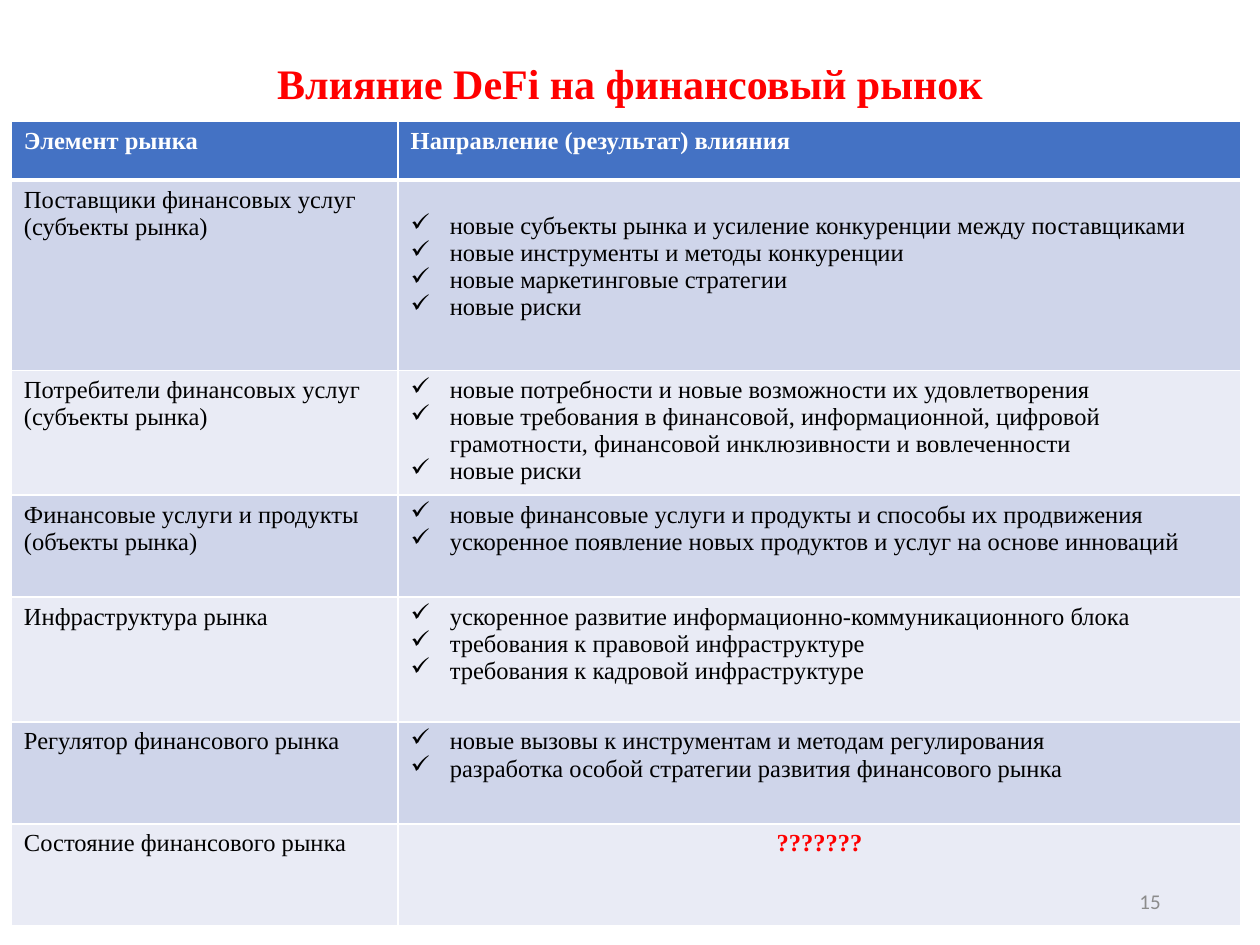
from lxml.etree import SubElement
from pptx import Presentation
from pptx.dml.color import RGBColor
from pptx.enum.text import MSO_ANCHOR as Anchor, MSO_AUTO_SIZE as AutoSize, PP_ALIGN as Align
from pptx.oxml import parse_xml
from pptx.oxml.ns import nsdecls, qn
from pptx.util import Inches, Pt

COLORS = {
    "accent": "FF0000",
    "header": "4472C4",
    "odd": "CFD5EA",
    "even": "E9EBF5",
    "white": "FFFFFF",
    "black": "000000",
    "number": "8C8C8C",
}
SERIF = "Times New Roman"
BODY = {"name": SERIF, "size": Pt(14), "bold": False, "color": "black"}
HEADING = {**BODY, "bold": True, "color": "white"}
ACCENT = {**BODY, "bold": True, "color": "accent"}
TITLE = {**ACCENT, "size": Pt(24)}
NUMBER = {"name": "Calibri", "size": Pt(12), "bold": False, "color": "number"}

COLUMN_WIDTHS = [3.07, 6.69]
ROW_HEIGHTS = [0.47, 1.51, 0.99, 0.81, 0.99, 0.81, 0.81]
HEADINGS = ["Элемент рынка", "Направление (результат) влияния"]
MARKET = [
    ("Поставщики финансовых услуг (субъекты рынка)", [
        "новые субъекты рынка и усиление конкуренции между поставщиками",
        "новые инструменты и методы конкуренции",
        "новые маркетинговые стратегии",
        "новые риски",
    ]),
    ("Потребители финансовых услуг (субъекты рынка)", [
        "новые потребности и новые возможности их удовлетворения",
        "новые требования в финансовой, информационной, цифровой грамотности, "
        "финансовой инклюзивности и вовлеченности",
        "новые риски",
    ]),
    ("Финансовые услуги и продукты (объекты рынка)", [
        "новые финансовые услуги и продукты и способы их продвижения",
        "ускоренное появление новых продуктов и услуг на основе инноваций",
    ]),
    ("Инфраструктура рынка", [
        "ускоренное развитие информационно-коммуникационного блока",
        "требования к правовой инфраструктуре",
        "требования к кадровой инфраструктуре",
    ]),
    ("Регулятор финансового рынка", [
        "новые вызовы к инструментам и методам регулирования",
        "разработка особой стратегии развития финансового рынка",
    ]),
]
OUTLOOK = ("Состояние финансового рынка", "???????")


def write(para, text, style, align=Align.LEFT):
    para.alignment = align
    span = para.add_run()
    span.text = text
    for key, value in style.items():
        if key == "color":
            span.font.color.rgb = RGBColor.from_string(COLORS[value])
        else:
            setattr(span.font, key, value)


def place(shape, left, top, width, height):
    bounds = {"left": left, "top": top, "width": width, "height": height}
    for key, value in bounds.items():
        setattr(shape, key, Inches(value))


def add_check(para):
    props = para._p.get_or_add_pPr()
    props.set("marL", str(Inches(0.31)))
    props.set("indent", str(-Inches(0.31)))
    SubElement(props, qn("a:buChar")).set("char", "✓")


def write_checklist(cell, items):
    frame = cell.text_frame
    for index, item in enumerate(items):
        para = frame.add_paragraph() if index else frame.paragraphs[0]
        write(para, item, BODY)
        add_check(para)


def paint_cell(cell, fill, top=1, bottom=1):
    cell.fill.solid()
    cell.fill.fore_color.rgb = RGBColor.from_string(COLORS[fill])
    props = cell._tc.get_or_add_tcPr()
    sides = {"lnL": 1, "lnR": 1, "lnT": top, "lnB": bottom}
    for index, (side, points) in enumerate(sides.items()):
        props.insert(index, parse_xml(
            f'<a:{side} {nsdecls("a")} w="{Pt(points)}"><a:solidFill>'
            f'<a:srgbClr val="{COLORS["white"]}"/></a:solidFill></a:{side}>'))


def add_title(page, text):
    title = page.shapes.title
    place(title, 0.69, 0.4, 8.62, 0.56)
    frame = title.text_frame
    frame.auto_size = AutoSize.NONE
    frame.vertical_anchor = Anchor.MIDDLE
    para = frame.paragraphs[0]
    para.line_spacing = 0.9
    write(para, text, TITLE, Align.CENTER)


def add_market_table(page):
    table = page.shapes.add_table(
        len(ROW_HEIGHTS), len(COLUMN_WIDTHS), Inches(0.09), Inches(0.96),
        Inches(sum(COLUMN_WIDTHS)), Inches(sum(ROW_HEIGHTS))).table
    for column, width in zip(table.columns, COLUMN_WIDTHS):
        column.width = Inches(width)
    for index, (row, height) in enumerate(zip(table.rows, ROW_HEIGHTS)):
        row.height = Inches(height)
        fill = "header" if index == 0 else "odd" if index % 2 else "even"
        for cell in row.cells:
            paint_cell(cell, fill, top=3 if index == 1 else 1, bottom=3 if index == 0 else 1)

    for column, heading in enumerate(HEADINGS):
        write(table.cell(0, column).text_frame.paragraphs[0], heading, HEADING)
    for row, (element, effects) in enumerate(MARKET, start=1):
        write(table.cell(row, 0).text_frame.paragraphs[0], element, BODY)
        write_checklist(table.cell(row, 1), effects)
    table.cell(1, 1).margin_top = Inches(0.26)

    last = len(ROW_HEIGHTS) - 1
    element, effect = OUTLOOK
    write(table.cell(last, 0).text_frame.paragraphs[0], element, BODY)
    write(table.cell(last, 1).text_frame.paragraphs[0], effect, ACCENT, Align.CENTER)


def add_page_number(page, number):
    box = page.shapes.add_textbox(Inches(7.06), Inches(6.95), Inches(2.25), Inches(0.4))
    frame = box.text_frame
    frame.word_wrap = True
    frame.vertical_anchor = Anchor.MIDDLE
    write(frame.paragraphs[0], number, NUMBER, Align.RIGHT)


def main():
    deck = Presentation()
    deck.slide_width, deck.slide_height = Inches(10), Inches(7.5)
    page = deck.slides.add_slide(deck.slide_layouts[5])
    add_title(page, "Влияние DeFi на финансовый рынок")
    add_market_table(page)
    add_page_number(page, "15")
    deck.save("out.pptx")


if __name__ == "__main__":
    main()
